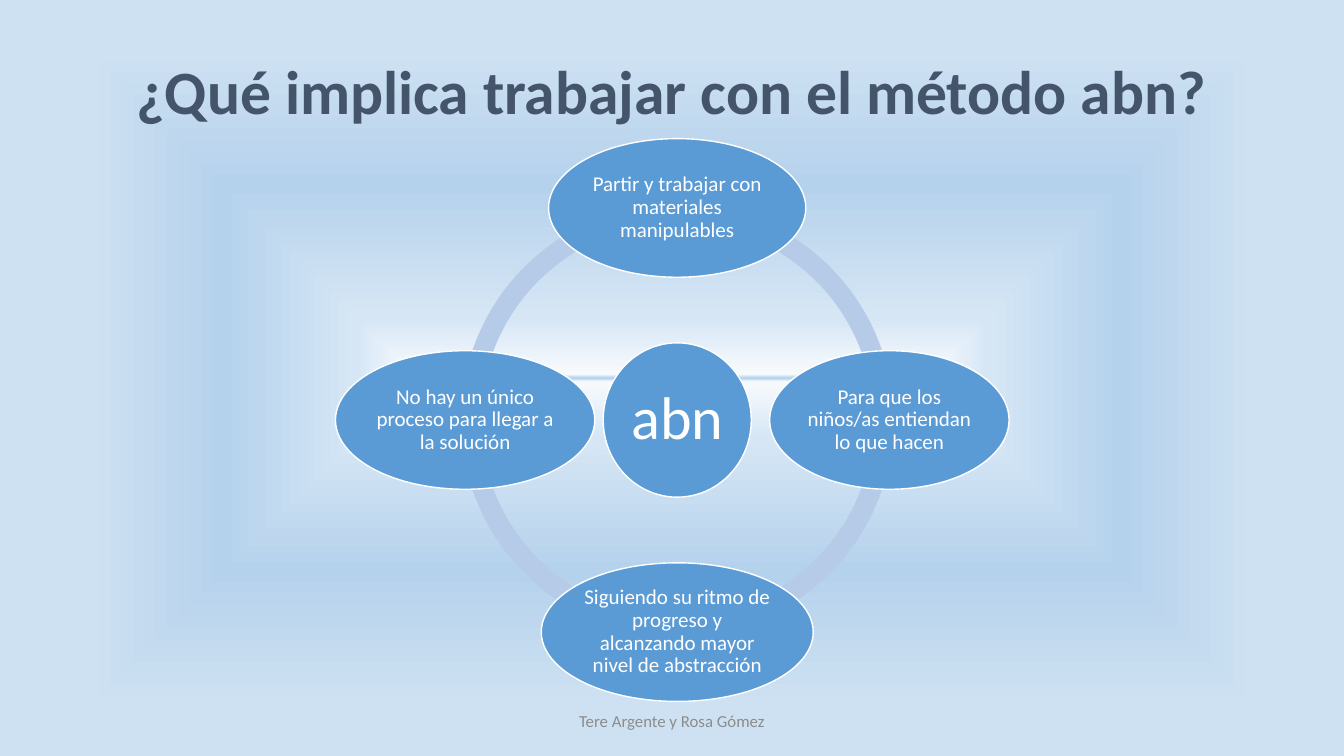
import math
from dataclasses import dataclass

from lxml import etree
from pptx import Presentation
from pptx import util as u
from pptx.dml.color import RGBColor
from pptx.enum import shapes, text
from pptx.oxml import parse_xml
from pptx.oxml.ns import qn

EMU_PER_PX = 9525


@dataclass(frozen=True)
class Theme:
    font: str = "Calibri"
    title: str = "44546A"
    node: str = "5B9BD5"
    ring: str = "B5CBE7"
    white: str = "FFFFFF"
    footer: str = "8C8C8C"
    title_size: int = 44
    hub_size: int = 43
    node_size: int = 15
    footer_size: int = 12
    backdrop: tuple = ((0, "B5D2EC"), (1, "F7FAFD"), (16, "D6E6F5"),
                       (51, "B5D2EC"), (87, "CEE1F2"))


THEME = Theme()
CENTER = (645, 400)
ORBIT = 202
RING_SIZE = 412
QUARTER_TURN = 54
NODE_HEIGHT = 132
NODES = (
    ("Partir y trabajar con materiales manipulables", 245),
    ("Para que los niños/as entiendan lo que hacen", 228),
    ("Siguiendo su ritmo de progreso y alcanzando mayor nivel de abstracción", 259),
    ("No hay un único proceso para llegar a la solución", 247),
)


def px(*lengths):
    return [u.Emu(round(length * EMU_PER_PX)) for length in lengths]


def centered(x, y, width, height):
    return px(x - width / 2, y - height / 2, width, height)


def paint_backdrop(page):
    fill = page.background.fill
    fill.gradient()
    old = page.background._cSld.find(".//" + qn("a:gradFill"))
    stops = "".join(
        f'<a:gs pos="{percent * 1000}"><a:srgbClr val="{color}"/></a:gs>'
        for percent, color in THEME.backdrop)
    gradient = parse_xml(
        '<a:gradFill xmlns:a="http://schemas.openxmlformats.org/drawingml/2006/main" '
        f'rotWithShape="1"><a:gsLst>{stops}</a:gsLst><a:path path="shape">'
        '<a:fillToRect l="50000" t="50000" r="50000" b="50000"/></a:path></a:gradFill>')
    old.getparent().replace(old, gradient)


def write(shape, wording, size, color, bold=False, spacing=0.9, inset=None):
    frame = shape.text_frame
    frame.word_wrap = True
    frame.vertical_anchor = text.MSO_ANCHOR.MIDDLE
    if inset is not None:
        frame.margin_left, frame.margin_top, frame.margin_right, frame.margin_bottom = (
            px(inset) * 4)
    para = frame.paragraphs[0]
    para.text = wording
    para.alignment = text.PP_ALIGN.CENTER
    para.line_spacing = spacing
    para.font.name = THEME.font
    para.font.size = u.Pt(size)
    para.font.bold = bold
    para.font.color.rgb = RGBColor.from_string(color)


def add_label(page, bounds, wording, size, color, **style):
    write(page.shapes.add_textbox(*px(*bounds)), wording, size, color, **style)


def add_filled(page, kind, bounds, color):
    shape = page.shapes.add_shape(kind, *bounds)
    shape.shadow.inherit = False
    shape.fill.solid()
    shape.fill.fore_color.rgb = RGBColor.from_string(color)
    return shape


def add_arc(page, start):
    bounds = centered(*CENTER, RING_SIZE, RING_SIZE)
    arc = add_filled(page, shapes.MSO_SHAPE.BLOCK_ARC, bounds, THEME.ring)
    arc.line.fill.background()
    arc.adjustments[0] = start
    arc.adjustments[1] = (start + QUARTER_TURN) % (4 * QUARTER_TURN)
    arc.adjustments[2] = 0.046


def add_bubble(page, bounds, wording, size, inset):
    bubble = add_filled(page, shapes.MSO_SHAPE.OVAL, bounds, THEME.node)
    bubble.line.color.rgb = RGBColor.from_string(THEME.white)
    bubble.line.width = u.Pt(1)
    write(bubble, wording, size, THEME.white, inset=inset)


def main():
    deck = Presentation()
    deck.slide_width, deck.slide_height = px(1280, 720)
    page = deck.slides.add_slide(deck.slide_layouts[6])
    paint_backdrop(page)
    add_label(page, (88, 38, 1104, 104), "¿Qué implica trabajar con el método abn?",
              THEME.title_size, THEME.title, bold=True)
    for quarter in range(4):
        add_arc(page, quarter * QUARTER_TURN)
    add_bubble(page, centered(*CENTER, 141, 147), "abn", THEME.hub_size, 6)
    for index, (wording, width) in enumerate(NODES):
        angle = math.pi / 2 * (index - 1)
        x = CENTER[0] + ORBIT * math.cos(angle)
        y = CENTER[1] + ORBIT * math.sin(angle)
        add_bubble(page, centered(x, y, width, NODE_HEIGHT), wording, THEME.node_size, 2)
    add_label(page, (424, 667, 432, 38), "Tere Argente y Rosa Gómez",
              THEME.footer_size, THEME.footer, spacing=1.0)
    deck.save("out.pptx")


if __name__ == "__main__":
    main()
